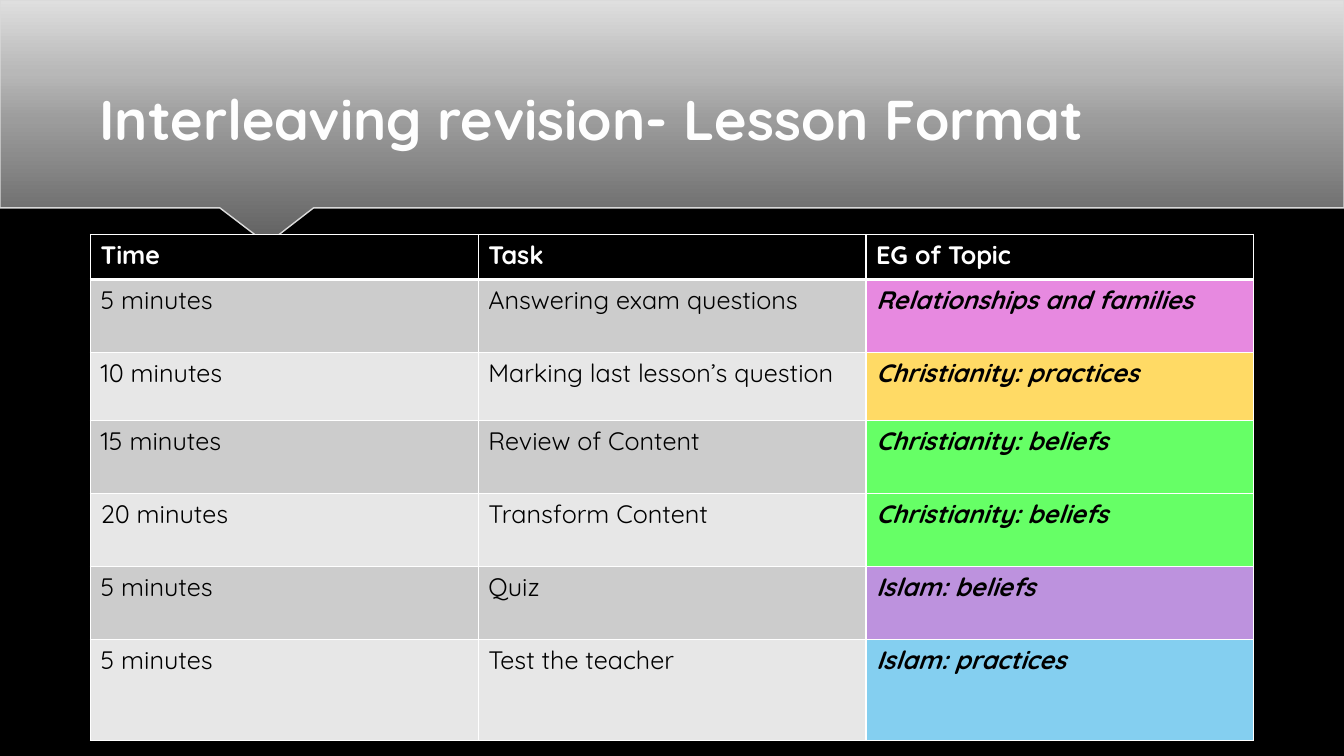
from typing import NamedTuple

from lxml.etree import SubElement
from pptx import Presentation
from pptx.dml.color import RGBColor
from pptx.enum.text import MSO_ANCHOR
from pptx.oxml.ns import qn
from pptx.util import Pt

FONT = "Quicksand"
WHITE, BLACK = "FFFFFF", "000000"
BAND_FILLS = ("CCCCCC", "E7E7E7")
BANNER_STOPS = ((0, "616161"), (50, "9C9C9C"), (70, "B8B8B8"), (100, "DFDFDF"))
BANNER_OUTLINE = (
    (960, 0), (0, 0), (0, 148.5), (157, 148.5), (187, 171.4),
    (191, 172), (194.4, 171.4), (224, 148.5), (960, 148.5),
)
HEADINGS = ("Time", "Task", "EG of Topic")
HEADING_HEIGHT = 32.2
COLUMN_WIDTH = 277


class Activity(NamedTuple):
    time: str
    task: str
    topic: str
    topic_fill: str
    height: float = 52.2


ACTIVITIES = (
    Activity("5 minutes", "Answering exam questions", "Relationships and families", "E789E0"),
    Activity("10 minutes", "Marking last lesson’s question", "Christianity: practices", "FFDA65", 48.4),
    Activity("15 minutes", "Review of Content", "Christianity: beliefs", "66FF66"),
    Activity("20 minutes", "Transform Content", "Christianity: beliefs", "66FF66"),
    Activity("5 minutes", "Quiz", "Islam: beliefs", "BD92DE"),
    Activity("5 minutes", "Test the teacher", "Islam: practices", "84CFF0", 72),
)


def rgb(color: str) -> RGBColor:
    return RGBColor.from_string(color)


def style_text(frame, size: float, color: str, bold: bool, italic: bool = False) -> None:
    for run in frame.paragraphs[0].runs:
        font = run.font
        font.name, font.size = FONT, Pt(size)
        font.bold, font.italic = bold, italic
        font.color.rgb = rgb(color)


def add_drop_shadow(effects) -> None:
    """Put a soft downward shadow into an a:effectLst element."""
    shadow = SubElement(effects, qn("a:outerShdw"), blurRad=str(Pt(4)),
                        dist=str(Pt(3)), dir="5400000", rotWithShape="0")
    tint = SubElement(shadow, qn("a:srgbClr"), val=BLACK)
    SubElement(tint, qn("a:alpha"), val="35000")


def add_banner(slide) -> None:
    builder = slide.shapes.build_freeform(
        Pt(BANNER_OUTLINE[0][0]), Pt(BANNER_OUTLINE[0][1]))
    builder.add_line_segments([(Pt(x), Pt(y)) for x, y in BANNER_OUTLINE[1:]])
    banner = builder.convert_to_shape()
    banner.fill.gradient()
    banner.fill.gradient_angle = 90
    properties = banner.element.spPr
    stops = properties.find(f".//{qn('a:gsLst')}")
    stops.clear()
    for position, color in BANNER_STOPS:
        stop = SubElement(stops, qn("a:gs"), pos=str(position * 1000))
        SubElement(stop, qn("a:srgbClr"), val=color)
    banner.line.color.rgb = rgb("DADADA")
    banner.line.width = Pt(1)
    banner.shadow.inherit = False
    add_drop_shadow(properties.find(qn("a:effectLst")))


def add_title(slide, wording: str) -> None:
    title = slide.shapes.add_textbox(Pt(64), Pt(35.5), Pt(832), Pt(76.2))
    frame = title.text_frame
    frame.word_wrap = True
    frame.vertical_anchor = MSO_ANCHOR.BOTTOM
    frame.text = wording
    style_text(frame, 40, "FEFEFE", bold=True)
    run_properties = frame.paragraphs[0].runs[0].font._element
    effects = SubElement(run_properties, qn("a:effectLst"))
    run_properties.find(qn("a:solidFill")).addnext(effects)
    add_drop_shadow(effects)


def add_borders(cell, top: float, bottom: float) -> None:
    properties = cell._tc.get_or_add_tcPr()
    for side, width in (("L", 1), ("R", 1), ("T", top), ("B", bottom)):
        line = SubElement(properties, qn(f"a:ln{side}"), w=str(Pt(width)))
        fill = SubElement(line, qn("a:solidFill"))
        SubElement(fill, qn("a:srgbClr"), val=WHITE)


def add_schedule(slide) -> None:
    heights = [HEADING_HEIGHT] + [activity.height for activity in ACTIVITIES]
    table = slide.shapes.add_table(
        len(heights), len(HEADINGS), Pt(64.6), Pt(167.4),
        Pt(COLUMN_WIDTH * len(HEADINGS)), Pt(sum(heights))).table
    table.horz_banding = False
    for column in table.columns:
        column.width = Pt(COLUMN_WIDTH)
    for row, height in zip(table.rows, heights):
        row.height = Pt(height)

    def fill_cell(row: int, column: int, wording: str, fill: str) -> None:
        cell = table.cell(row, column)
        heading, topic = row == 0, column == 2
        add_borders(cell, 3 if row == 1 else 1, 3 if heading else 1)
        cell.fill.solid()
        cell.fill.fore_color.rgb = rgb(fill)
        cell.text_frame.text = wording
        style_text(cell.text_frame, 18, WHITE if heading else BLACK,
                   bold=heading or topic, italic=topic and not heading)

    for column, heading in enumerate(HEADINGS):
        fill_cell(0, column, heading, BLACK)
    for row, activity in enumerate(ACTIVITIES, start=1):
        band = BAND_FILLS[(row - 1) % 2]
        fill_cell(row, 0, activity.time, band)
        fill_cell(row, 1, activity.task, band)
        fill_cell(row, 2, activity.topic, activity.topic_fill)


def main() -> None:
    presentation = Presentation()
    presentation.slide_width, presentation.slide_height = Pt(960), Pt(540)
    slide = presentation.slides.add_slide(presentation.slide_layouts[6])
    slide.background.fill.solid()
    slide.background.fill.fore_color.rgb = rgb(BLACK)
    add_banner(slide)
    add_title(slide, "Interleaving revision- Lesson Format")
    add_schedule(slide)
    presentation.save("out.pptx")


if __name__ == "__main__":
    main()
